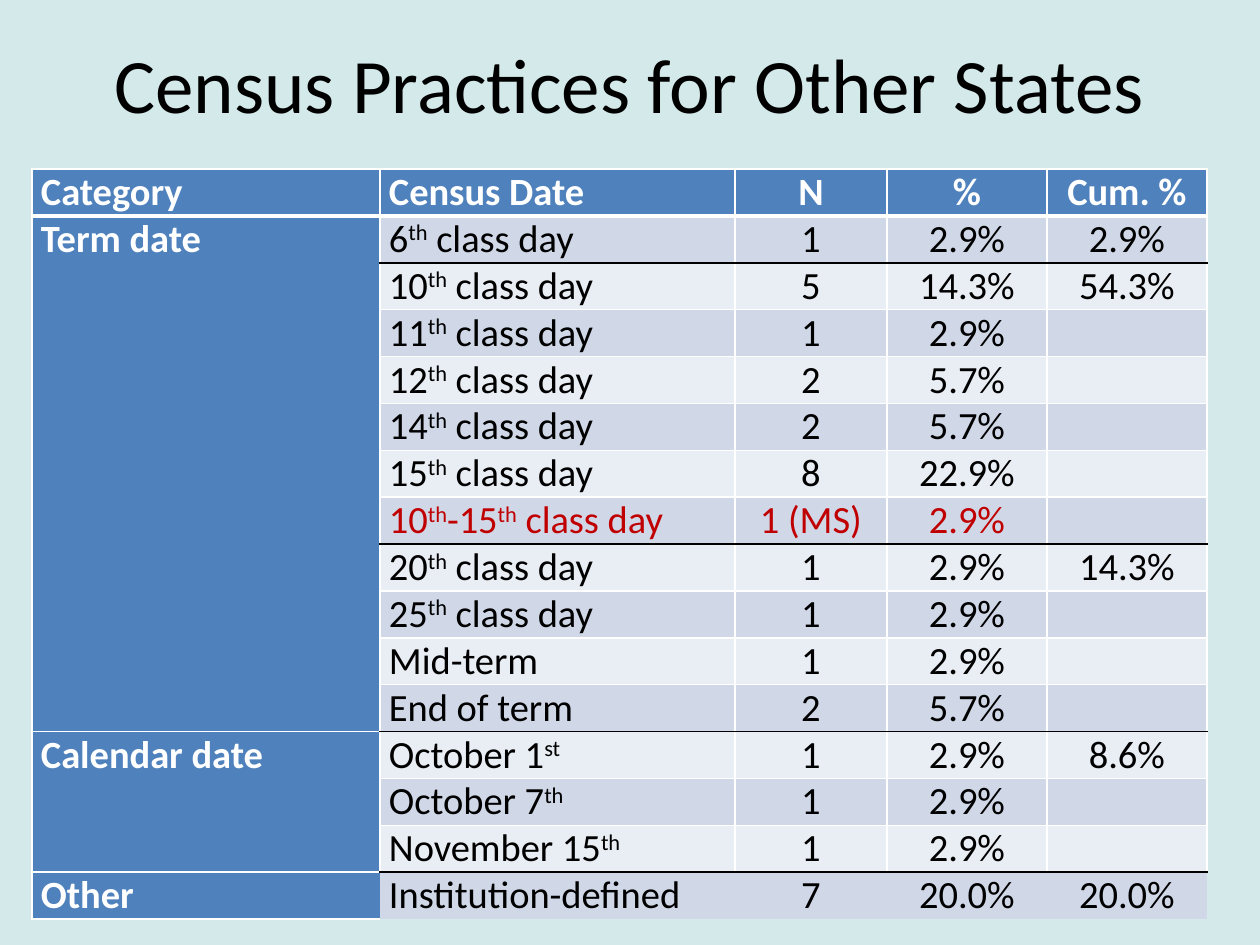
from dataclasses import dataclass
from typing import Optional

import pptx
import pptx.dml.color
import pptx.enum.text
import pptx.oxml
import pptx.oxml.ns
import pptx.util

PX = 914400 // 126
FONT = "Calibri"
COLORS = {
    "background": "D4E9EA",
    "header": "4F81BD",
    "odd": "D0D8E8",
    "even": "E9EDF4",
    "white": "FFFFFF",
    "black": "000000",
    "highlight": "C00000",
}
COLUMN_WIDTHS = [348, 355, 152, 160, 160]
ROW_HEIGHT = 46
CELL_MARGIN = 9
HEADINGS = ["Category", "Census Date", "N", "%", "Cum. %"]


@dataclass
class Practice:
    date: str
    count: str
    percent: str
    cumulative: str = ""
    color: str = "black"


@dataclass
class Category:
    name: str
    practices: list[Practice]


@dataclass
class Border:
    color: str = "white"
    points: int = 1


CATEGORIES = [
    Category("Term date", [
        Practice("6^th^ class day", "1", "2.9%", "2.9%"),
        Practice("10^th^ class day", "5", "14.3%", "54.3%"),
        Practice("11^th^ class day", "1", "2.9%"),
        Practice("12^th^ class day", "2", "5.7%"),
        Practice("14^th^ class day", "2", "5.7%"),
        Practice("15^th^ class day", "8", "22.9%"),
        Practice("10^th^-15^th^ class day", "1 (MS)", "2.9%", color="highlight"),
        Practice("20^th^ class day", "1", "2.9%", "14.3%"),
        Practice("25^th^ class day", "1", "2.9%"),
        Practice("Mid-term", "1", "2.9%"),
        Practice("End of term", "2", "5.7%"),
    ]),
    Category("Calendar date", [
        Practice("October 1^st^", "1", "2.9%", "8.6%"),
        Practice("October 7^th^", "1", "2.9%"),
        Practice("November 15^th^", "1", "2.9%"),
    ]),
    Category("Other", [Practice("Institution-defined", "7", "20.0%", "20.0%")]),
]
ROW_COUNT = 1 + sum(len(c.practices) for c in CATEGORIES)
GROUP_ENDS = {1, 7, 11, 14}


def px(n: int) -> int:
    return pptx.util.Emu(n * PX)


def rgb(name: str) -> pptx.dml.color.RGBColor:
    return pptx.dml.color.RGBColor.from_string(COLORS[name])


def add_runs(p, text: str, size: int, color: str, bold: bool = False) -> None:
    for i, part in enumerate(text.split("^")):
        if not part:
            continue
        r = p.add_run()
        r.text = part
        r.font.name = FONT
        r.font.size = pptx.util.Pt(size)
        r.font.bold = bold
        r.font.color.rgb = rgb(color)
        if i % 2:
            r._r.get_or_add_rPr().set("baseline", "30000")


def horizontal_border(above: int, col: int) -> Optional[Border]:
    if above == 0:
        return Border(points=3)
    if col and above in GROUP_ENDS:
        return Border("black")
    if col and above == ROW_COUNT - 1:
        return None
    return Border()


def set_borders(cell, row: int, col: int) -> None:
    last = row == ROW_COUNT - 1
    borders = {
        "lnL": None if last and col else Border(),
        "lnR": None if last else Border(),
        "lnT": horizontal_border(row - 1, col),
        "lnB": horizontal_border(row, col),
    }
    tcPr = cell._tc.get_or_add_tcPr()
    for tag, border in borders.items():
        ln = pptx.oxml.parse_xml(f'<a:{tag} {pptx.oxml.ns.nsdecls("a")}/>')
        if border:
            ln.set("w", str(pptx.util.Pt(border.points)))
            fill = pptx.oxml.parse_xml(
                f'<a:solidFill {pptx.oxml.ns.nsdecls("a")}>'
                f'<a:srgbClr val="{COLORS[border.color]}"/></a:solidFill>')
        else:
            fill = pptx.oxml.parse_xml(f'<a:noFill {pptx.oxml.ns.nsdecls("a")}/>')
        ln.append(fill)
        tcPr.append(ln)


def fill_cell(cell, row: int, col: int, text: str, color: str) -> None:
    heading = row == 0 or col == 0
    cell.margin_left = cell.margin_right = px(CELL_MARGIN)
    cell.margin_top = cell.margin_bottom = 0
    set_borders(cell, row, col)
    cell.fill.solid()
    cell.fill.fore_color.rgb = rgb("header" if heading else "odd" if row % 2 else "even")
    p = cell.text_frame.paragraphs[0]
    if col > 1:
        p.alignment = pptx.enum.text.PP_ALIGN.CENTER
    add_runs(p, text, 22, "white" if heading else color, heading)


def add_title(s, text: str) -> None:
    sp = s.shapes.title
    sp.left, sp.top, sp.width, sp.height = px(42), px(4), px(1176), px(158)
    tf = sp.text_frame
    tf.word_wrap = True
    tf.vertical_anchor = pptx.enum.text.MSO_ANCHOR.MIDDLE
    p = tf.paragraphs[0]
    p.alignment = pptx.enum.text.PP_ALIGN.CENTER
    add_runs(p, text, 44, "black")


def add_census_table(s) -> None:
    table = s.shapes.add_table(
        ROW_COUNT, len(HEADINGS), px(32), px(169),
        px(sum(COLUMN_WIDTHS)), px(ROW_HEIGHT * ROW_COUNT)).table
    table.horz_banding = False
    for column, width in zip(table.columns, COLUMN_WIDTHS):
        column.width = px(width)
    for table_row in table.rows:
        table_row.height = px(ROW_HEIGHT)

    rows = [(HEADINGS, "white")]
    for category in CATEGORIES:
        first = len(rows)
        for i, item in enumerate(category.practices):
            name = "" if i else category.name
            rows.append(([name, item.date, item.count, item.percent, item.cumulative],
                         item.color))
        if len(category.practices) > 1:
            table.cell(first, 0).merge(table.cell(len(rows) - 1, 0))
    for row, (values, color) in enumerate(rows):
        for col, text in enumerate(values):
            fill_cell(table.cell(row, col), row, col, text, color)


def main() -> None:
    prs = pptx.Presentation()
    prs.slide_width, prs.slide_height = px(1260), px(945)
    s = prs.slides.add_slide(prs.slide_layouts[5])
    s.background.fill.solid()
    s.background.fill.fore_color.rgb = rgb("background")
    add_title(s, "Census Practices for Other States")
    add_census_table(s)
    prs.save("out.pptx")


if __name__ == "__main__":
    main()
